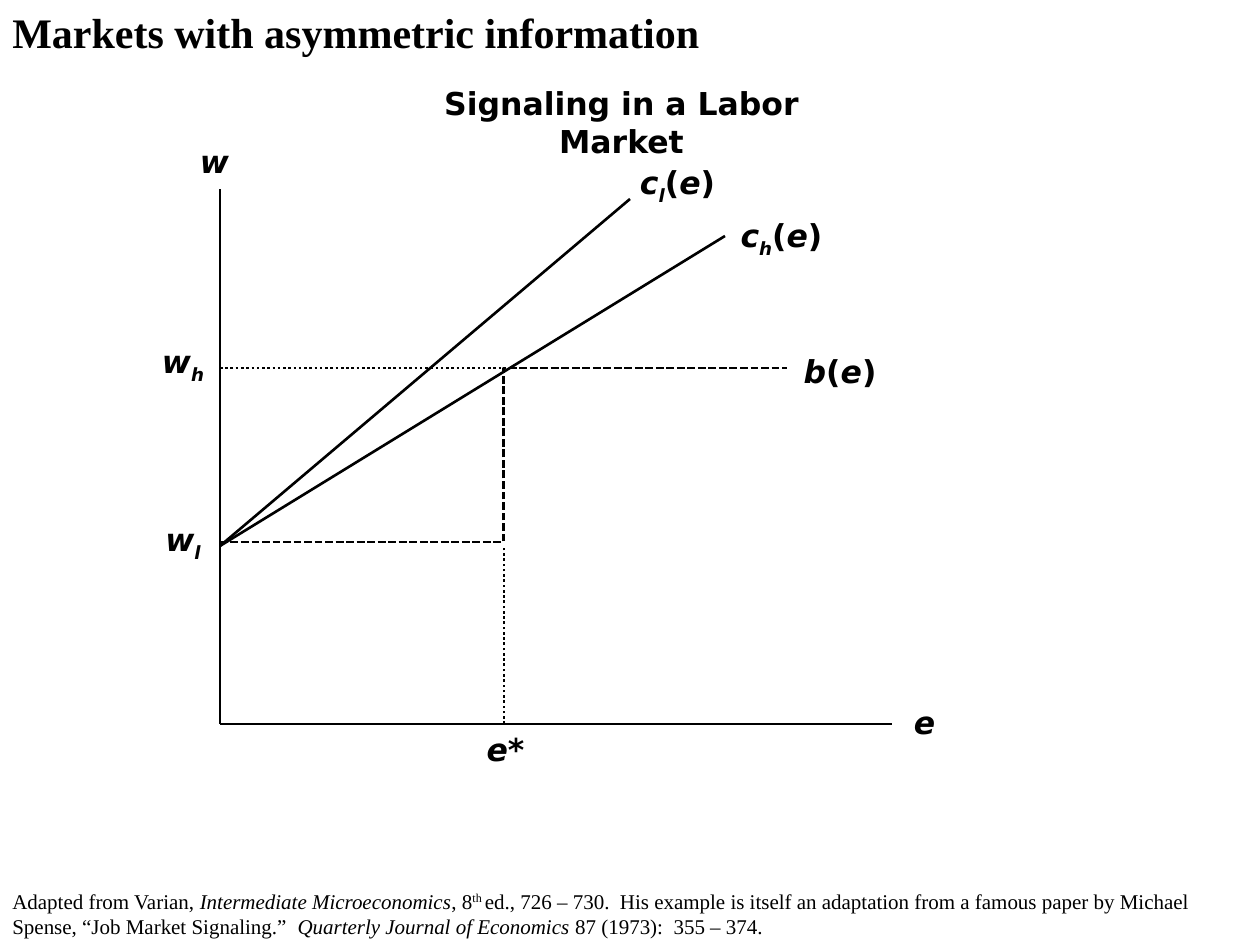
from lxml import etree
from pptx import Presentation
from pptx import util as u
from pptx.dml.color import RGBColor
from pptx.enum import dml, shapes, text
from pptx.oxml import ns

PX = 914400 / 126  # EMU in one px
WIDTH, HEIGHT = 1260, 945
BLACK = RGBColor(0, 0, 0)
SERIF, SANS = "Times New Roman", "DejaVu Sans"

HEADING = {"name": SERIF, "size": u.Pt(24), "bold": True}
CAPTION = {"name": SANS, "size": u.Pt(18), "bold": True}
SOURCE = {"name": SERIF, "size": u.Pt(12), "bold": False}
LEFT, CENTER = text.PP_ALIGN.LEFT, text.PP_ALIGN.CENTER
STRAIGHT, ELBOW = shapes.MSO_CONNECTOR.STRAIGHT, shapes.MSO_CONNECTOR.ELBOW
DASHED = dml.MSO_LINE.SQUARE_DOT  # sysDash
DOTTED = dml.MSO_LINE.ROUND_DOT   # sysDot


def emu(px):
    return u.Emu(round(px * PX))


def add_text(page, box, spans, font, align=LEFT, wrap=False):
    """Write spans of (wording, italic, baseline percent) as one paragraph."""
    frame = page.shapes.add_textbox(*map(emu, box)).text_frame
    frame.word_wrap = wrap
    frame.auto_size = text.MSO_AUTO_SIZE.SHAPE_TO_FIT_TEXT
    para = frame.paragraphs[0]
    para.alignment = align
    for wording, italic, baseline in spans:
        span = para.add_run()
        span.text = wording
        for key, value in {**font, "italic": italic}.items():
            setattr(span.font, key, value)
        span.font.color.rgb = BLACK
        if baseline:
            span._r.get_or_add_rPr().set("baseline", str(baseline * 1000))


def add_line(page, start, end, dash=None, kind=STRAIGHT):
    line = page.shapes.add_connector(kind, *map(emu, (*start, *end)))
    line.line.color.rgb = BLACK
    line.line.width = u.Pt(1.5)
    if dash:
        line.line.dash_style = dash
    etree.SubElement(line._element.spPr, ns.qn("a:effectLst"))


def symbol(name, subscript="", argument=""):
    """Spans of a variable or function such as c_h(e)."""
    spans = [(name, True, 0)]
    if subscript:
        spans.append((subscript, True, -25))
    if argument:
        spans += [("(", False, 0), (argument, True, 0), (")", False, 0)]
    return spans


def draw_headings(page, box):
    left, top, width, _ = box
    add_text(page, (left, top, 730, 64),
             [("Markets with asymmetric information", False, 0)], HEADING)
    add_text(page, (left + 364, top + 78, 515, 50),
             [("Signaling in a Labor Market", False, 0)], CAPTION, CENTER)


def draw_diagram(page, box):
    left, top, width, height = box
    axis, base = left + 73, top + 588
    e_star = left + 357
    high, low, cost_start = top + 232, top + 406, top + 410

    # Axes
    add_line(page, (axis, top + 53), (axis, base))
    add_line(page, (axis, base), (left + 745, base))

    # Wage schedule b(e), stepping up at e*
    add_line(page, (axis, low), (left + 640, high), DASHED, ELBOW)

    # Cost lines of the high and low types
    for x, y in ((578, 100), (483, 63)):
        add_line(page, (axis, cost_start), (left + x, top + y))

    # Guides to e* and the high wage
    add_line(page, (e_star, base), (e_star, cost_start), DOTTED)
    add_line(page, (axis, high), (e_star, high), DOTTED)

    # Labels
    for x, y, wide, spans in (
        (754, 561, 47, symbol("e")),
        (39, 0, 57, symbol("w")),
        (640, 210, 106, symbol("b", argument="e")),
        (577, 74, 115, symbol("c", "h", "e")),
        (477, 21, 107, symbol("c", "l", "e")),
        (324, 588, 69, symbol("e*")),
        (0, 200, 72, symbol("w", "h")),
        (4, 378, 64, symbol("w", "l")),
    ):
        add_text(page, (left + x, top + y, wide, 50), spans, CAPTION, CENTER)


def draw_source(page, box):
    add_text(page, box, [
        ("Adapted from Varian, ", False, 0),
        ("Intermediate Microeconomics", True, 0),
        (", 8", False, 0),
        ("th ", False, 30),
        ("ed., 726 – 730.  His example is itself an adaptation from a famous "
         "paper by Michael Spense, “Job Market Signaling.”  ", False, 0),
        ("Quarterly Journal of Economics ", True, 0),
        ("87 (1973):  355 – 374.", False, 0),
    ], SOURCE, wrap=True)


def main():
    deck = Presentation()
    deck.slide_width, deck.slide_height = emu(WIDTH), emu(HEIGHT)
    page = deck.slides.add_slide(deck.slide_layouts[6])
    draw_headings(page, (0, 0, WIDTH, 128))
    draw_diagram(page, (147, 136, 801, 638))
    draw_source(page, (0, 882, WIDTH, 63))
    deck.save("out.pptx")


if __name__ == "__main__":
    main()
